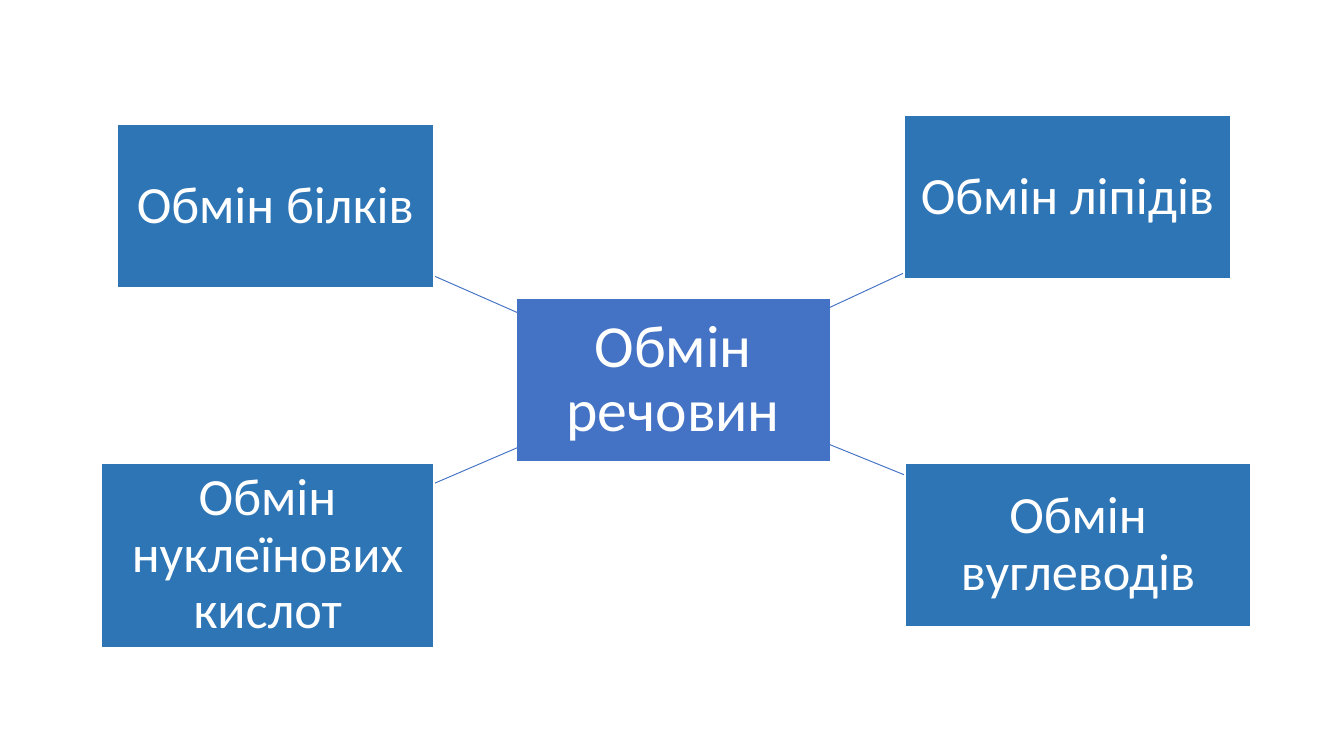
from pptx import Presentation
from pptx.dml.color import RGBColor
from pptx.enum.shapes import MSO_CONNECTOR as Connector, MSO_SHAPE as Shape
from pptx.enum.text import MSO_ANCHOR as Anchor, PP_ALIGN as Align
from pptx.oxml.ns import qn
from pptx.util import Pt
from lxml.etree import SubElement

WHITE = RGBColor(0xFF, 0xFF, 0xFF)
HUB_BLUE = RGBColor(0x44, 0x72, 0xC4)
BRANCH_BLUE = RGBColor(0x2E, 0x75, 0xB6)

BOX_HEIGHT = 87.8
HUB = ("Обмін речовин", (276.5, 159.8, 168.5, BOX_HEIGHT))
# Label, box (left, top, width, height), spoke (from hub, to branch)
BRANCHES = [
    ("Обмін білків", (62.6, 66.6, 169.9, BOX_HEIGHT),
     ((295.9, 175.7), (212.4, 139))),
    ("Обмін ліпідів", (484.2, 61.9, 175.2, BOX_HEIGHT),
     ((424.1, 174.2), (507.6, 135.4))),
    ("Обмін вуглеводів", (484.6, 248, 185.8, BOX_HEIGHT),
     ((427, 231.1), (506.9, 263.5))),
    ("Обмін нуклеїнових кислот", (54, 248, 178.6, 99),
     ((295.9, 231.8), (213.8, 267.1))),
]


def write_text(frame, text, *, size, color=WHITE, font="Calibri", align=Align.CENTER):
    frame.word_wrap = True
    frame.vertical_anchor = Anchor.MIDDLE
    frame.margin_left = frame.margin_right = Pt(1.4)
    frame.margin_top = frame.margin_bottom = Pt(1.4)
    paragraph = frame.paragraphs[0]
    paragraph.alignment = align
    paragraph.line_spacing = 0.9
    run = paragraph.add_run()
    run.text = text
    run.font.name = font
    run.font.size = Pt(size)
    run.font.color.rgb = color


def add_box(slide, label, bounds, fill, size):
    box = slide.shapes.add_shape(Shape.RECTANGLE, *map(Pt, bounds))
    box.shadow.inherit = False
    box.fill.solid()
    box.fill.fore_color.rgb = fill
    box.line.color.rgb = WHITE
    box.line.width = Pt(1)
    write_text(box.text_frame, label, size=size)


def add_spoke(slide, start, end):
    spoke = slide.shapes.add_connector(Connector.STRAIGHT, *map(Pt, start + end))
    spoke.line.color.rgb = HUB_BLUE
    spoke.line.width = Pt(0.5)
    SubElement(spoke._element.spPr, qn("a:effectLst"))


def main():
    deck = Presentation()
    deck.slide_width, deck.slide_height = Pt(720), Pt(405)
    slide = deck.slides.add_slide(deck.slide_layouts[6])

    add_box(slide, *HUB, HUB_BLUE, size=32)
    for label, bounds, (start, end) in BRANCHES:
        add_spoke(slide, start, end)
        add_box(slide, label, bounds, BRANCH_BLUE, size=28)

    deck.save("out.pptx")


if __name__ == "__main__":
    main()
